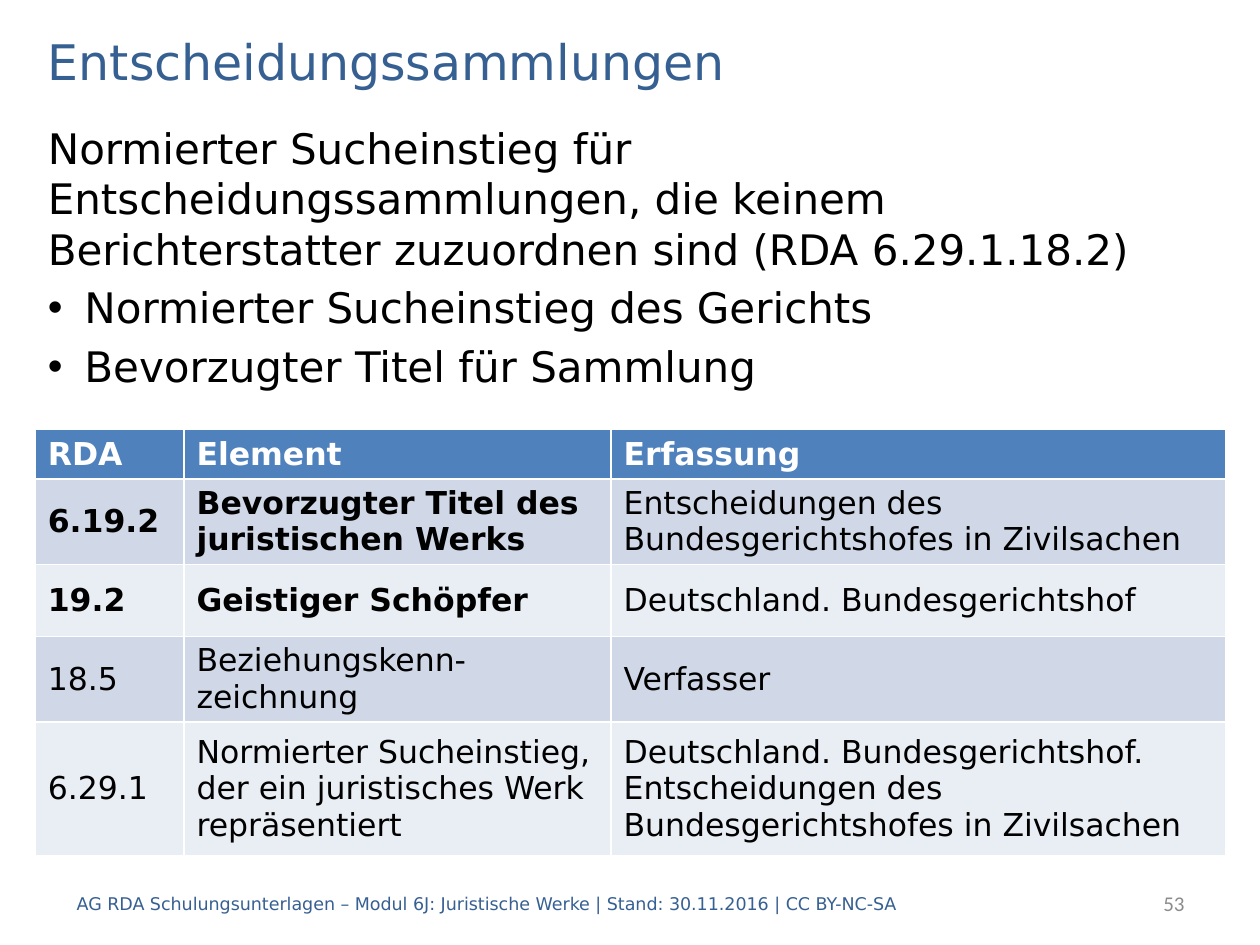
from pptx import Presentation
from pptx.dml.color import RGBColor
from pptx.enum.text import MSO_ANCHOR, MSO_AUTO_SIZE, PP_ALIGN
from pptx.oxml.xmlchemy import OxmlElement
from pptx.util import Inches, Pt

COLORS = {"blue": "376092", "black": "000000", "white": "FFFFFF", "grey": "8C8C8C",
          "header": "4F81BD", "odd": "D0D8E8", "even": "E9EDF4"}
FONT = "DejaVu Sans"
TITLE = "Entscheidungssammlungen"
INTRO = ("Normierter Sucheinstieg für Entscheidungssammlungen, die keinem "
         "Berichterstatter zuzuordnen sind (RDA 6.29.1.18.2)")
BULLETS = ["Normierter Sucheinstieg des Gerichts", "Bevorzugter Titel für Sammlung"]
ROWS = [
    ("RDA", "Element", "Erfassung"),
    ("6.19.2", "Bevorzugter Titel des juristischen Werks",
     "Entscheidungen des Bundesgerichtshofes in Zivilsachen"),
    ("19.2", "Geistiger Schöpfer", "Deutschland. Bundesgerichtshof"),
    ("18.5", "Beziehungskenn-zeichnung", "Verfasser"),
    ("6.29.1", "Normierter Sucheinstieg, der ein juristisches Werk repräsentiert",
     "Deutschland. Bundesgerichtshof. Entscheidungen des Bundesgerichtshofes in Zivilsachen"),
]
BOLD_ROWS = (1, 2)
COL_WIDTHS = (1.18, 3.39, 4.88)
ROW_HEIGHTS = (0.33, 0.57, 0.57, 0.57, 1.06)
FOOTER = "AG RDA Schulungsunterlagen – Modul 6J: Juristische Werke | Stand: 30.11.2016 | CC BY-NC-SA"
PAGE = "53"
LEFT, WIDTH = 0.28, 9.45


def write(p, text, size=18, color="black", font=FONT, bold=False, align=PP_ALIGN.LEFT):
    p.alignment = align
    r = p.add_run()
    r.text = text
    r.font.size, r.font.name, r.font.bold = Pt(size), font, bold
    r.font.color.rgb = RGBColor.from_string(COLORS[color])


def place(sp, x, y, w, h):
    sp.left, sp.top, sp.width, sp.height = map(Inches, (x, y, w, h))
    tf = sp.text_frame
    tf.word_wrap, tf.auto_size = True, MSO_AUTO_SIZE.NONE
    return tf


def add_body(tf):
    for i, text in enumerate([INTRO] + BULLETS):
        p = tf.add_paragraph() if i else tf.paragraphs[0]
        write(p, text, size=24)
        indent = Inches(0.29) if i else 0
        pPr = p._p.get_or_add_pPr()
        pPr.set("marL", str(indent))
        pPr.set("indent", str(-indent))
        bullet = OxmlElement("a:buChar" if i else "a:buNone")
        if i:
            bullet.set("char", "•")
        pPr.append(bullet)


def add_rules(s):
    table = s.shapes.add_table(len(ROWS), len(COL_WIDTHS), Inches(LEFT), Inches(3.41),
                               Inches(WIDTH), Inches(sum(ROW_HEIGHTS))).table
    for col, w in zip(table.columns, COL_WIDTHS):
        col.width = Inches(w)
    for i, (row, h, texts) in enumerate(zip(table.rows, ROW_HEIGHTS, ROWS)):
        row.height = Inches(h)
        fill = "header" if i == 0 else "odd" if i % 2 else "even"
        for j, (cell, text) in enumerate(zip(row.cells, texts)):
            cell.vertical_anchor = MSO_ANCHOR.MIDDLE
            cell.fill.solid()
            cell.fill.fore_color.rgb = RGBColor.from_string(COLORS[fill])
            p = cell.text_frame.paragraphs[0]
            if i:
                p.space_before = p.space_after = Pt(6)
            write(p, text, color="black" if i else "white",
                  bold=i == 0 or (i in BOLD_ROWS and j < 2))


def add_note(s, x, w, text, **fmt):
    tf = place(s.shapes.add_textbox(0, 0, 0, 0), x, 6.97, w, 0.4)
    tf.vertical_anchor = MSO_ANCHOR.MIDDLE
    write(tf.paragraphs[0], text, **fmt)


def main():
    """Build the slide on court decision collections."""
    prs = Presentation()
    prs.slide_width, prs.slide_height = Inches(10), Inches(7.5)
    s = prs.slides.add_slide(prs.slide_layouts[1])
    tf = place(s.shapes.title, LEFT, 0.2, WIDTH, 0.56)
    tf.vertical_anchor = MSO_ANCHOR.MIDDLE
    write(tf.paragraphs[0], TITLE, size=28, color="blue")
    add_body(place(s.placeholders[1], LEFT, 0.92, WIDTH, 5.98))
    add_note(s, 7.91, 1.59, PAGE, size=12, color="grey", font="Calibri", align=PP_ALIGN.RIGHT)
    add_note(s, 0.51, 7.09, FOOTER, size=10, color="blue")
    add_rules(s)
    prs.save("out.pptx")


if __name__ == "__main__":
    main()
